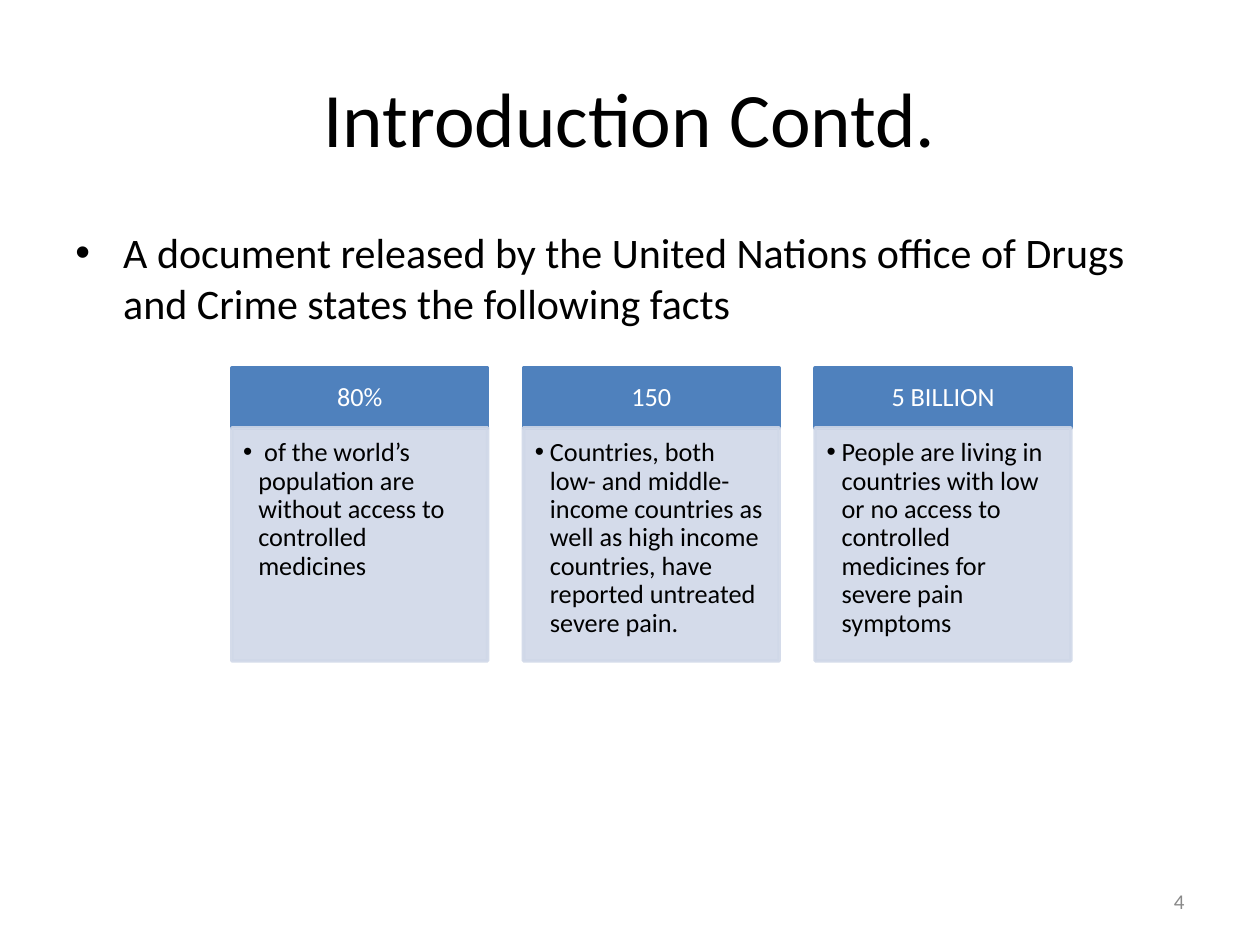
from dataclasses import dataclass

from lxml.etree import SubElement
from pptx import Presentation
from pptx.dml.color import RGBColor
from pptx.enum.shapes import MSO_SHAPE
from pptx.enum.text import MSO_ANCHOR as Anchor, PP_ALIGN as Align
from pptx.oxml.ns import qn
from pptx.util import Inches, Pt


@dataclass(frozen=True)
class Theme:
    font: str = "Calibri"
    text: str = "000000"
    header_text: str = "FFFFFF"
    number: str = "898989"
    header: str = "4F81BD"
    panel: str = "D0D8E8"
    panel_opacity: int = 90
    title_size: int = 44
    body_size: int = 24
    card_size: int = 15
    number_size: int = 12


@dataclass(frozen=True)
class Box:
    left: float
    top: float
    width: float
    height: float

    def lengths(self) -> tuple:
        return tuple(Inches(v) for v in (self.left, self.top, self.width, self.height))


@dataclass(frozen=True)
class CardGrid:
    left: float
    top: float
    column_width: float
    gap: float
    header_height: float
    panel_height: float

    def header(self, column: int) -> Box:
        return Box(self.column_left(column), self.top, self.column_width, self.header_height)

    def panel(self, column: int) -> Box:
        return Box(self.column_left(column), self.top + self.header_height,
                   self.column_width, self.panel_height)

    def column_left(self, column: int) -> float:
        return self.left + column * (self.column_width + self.gap)


@dataclass(frozen=True)
class Fact:
    figure: str
    detail: str


THEME = Theme()
WIDTH, HEIGHT = 10, 7.5
MARGIN = WIDTH * 0.05
CONTENT_WIDTH = WIDTH - 2 * MARGIN
GRID = CardGrid(left=1.84, top=2.92, column_width=2.03, gap=0.285,
                header_height=0.475, panel_height=1.85)
HEADER_INSETS = (0.12, 0.07, 0.12, 0.07)
PANEL_INSETS = (0.09, 0.09, 0.12, 0.13)
DEFAULT_INSETS = (0.1, 0.05, 0.1, 0.05)

FACTS = [
    Fact("80%", " of the world’s population are without access to controlled medicines"),
    Fact("150", "Countries, both low- and middle-income countries as well as high income "
                "countries, have reported untreated severe pain."),
    Fact("5 BILLION", "People are living in countries with low or no access to "
                      "controlled medicines for severe pain symptoms"),
]


def add_bullet(paragraph, indent: float) -> None:
    properties = paragraph._p.get_or_add_pPr()
    properties.set("marL", str(Inches(indent)))
    properties.set("indent", str(-Inches(indent)))
    SubElement(properties, qn("a:buFont")).set("typeface", "Arial")
    SubElement(properties, qn("a:buChar")).set("char", "•")


def write(shape, text: str, size: int, color: str, align=Align.LEFT, anchor=Anchor.TOP,
          insets: tuple = DEFAULT_INSETS, bullet_indent: float = 0,
          line_spacing: float = 1.0) -> None:
    frame = shape.text_frame
    frame_format = {"word_wrap": True, "vertical_anchor": anchor}
    for side, inset in zip(("left", "top", "right", "bottom"), insets):
        frame_format[f"margin_{side}"] = Inches(inset)
    for name, value in frame_format.items():
        setattr(frame, name, value)

    paragraph = frame.paragraphs[0]
    if bullet_indent:
        add_bullet(paragraph, bullet_indent)
    paragraph.alignment = align
    paragraph.line_spacing = line_spacing
    run = paragraph.add_run()
    run.text = text
    for name, value in {"name": THEME.font, "size": Pt(size)}.items():
        setattr(run.font, name, value)
    run.font.color.rgb = RGBColor.from_string(color)


def add_block(slide, box: Box, color: str, opacity: int = 100):
    """Add a rectangle whose fill and line share one colour."""
    shape = slide.shapes.add_shape(MSO_SHAPE.RECTANGLE, *box.lengths())
    shape.shadow.inherit = False
    shape.fill.solid()
    shape.line.width = Pt(2)
    for paint in (shape.fill.fore_color, shape.line.color):
        paint.rgb = RGBColor.from_string(color)
    if opacity < 100:
        for rgb in shape._element.spPr.iter(qn("a:srgbClr")):
            SubElement(rgb, qn("a:alpha")).set("val", str(opacity * 1000))
    return shape


def add_card(slide, column: int, fact: Fact) -> None:
    header = add_block(slide, GRID.header(column), THEME.header)
    write(header, fact.figure, THEME.card_size, THEME.header_text, Align.CENTER,
          Anchor.MIDDLE, HEADER_INSETS, line_spacing=0.9)
    panel = add_block(slide, GRID.panel(column), THEME.panel, THEME.panel_opacity)
    write(panel, fact.detail, THEME.card_size, THEME.text, insets=PANEL_INSETS,
          bullet_indent=0.12, line_spacing=0.9)


def main() -> None:
    presentation = Presentation()
    presentation.slide_width = Inches(WIDTH)
    presentation.slide_height = Inches(HEIGHT)
    slide = presentation.slides.add_slide(presentation.slide_layouts[5])

    title = slide.shapes.title
    title_box = Box(MARGIN, HEIGHT * 0.04, CONTENT_WIDTH, 1.25)
    for name, value in zip(("left", "top", "width", "height"), title_box.lengths()):
        setattr(title, name, value)
    write(title, "Introduction Contd.", THEME.title_size, THEME.text,
          Align.CENTER, Anchor.MIDDLE)

    body = slide.shapes.add_textbox(*Box(MARGIN, 1.75, CONTENT_WIDTH, HEIGHT * 0.66).lengths())
    write(body, "A document released by the United Nations office of Drugs and Crime "
                "states the following facts",
          THEME.body_size, THEME.text, bullet_indent=0.38)

    number_width = 2.33
    number_box = Box(WIDTH - MARGIN - number_width, 6.95, number_width, 0.4)
    number = slide.shapes.add_textbox(*number_box.lengths())
    write(number, "4", THEME.number_size, THEME.number, Align.RIGHT, Anchor.MIDDLE)

    for column, fact in enumerate(FACTS):
        add_card(slide, column, fact)

    presentation.save("out.pptx")


if __name__ == "__main__":
    main()
